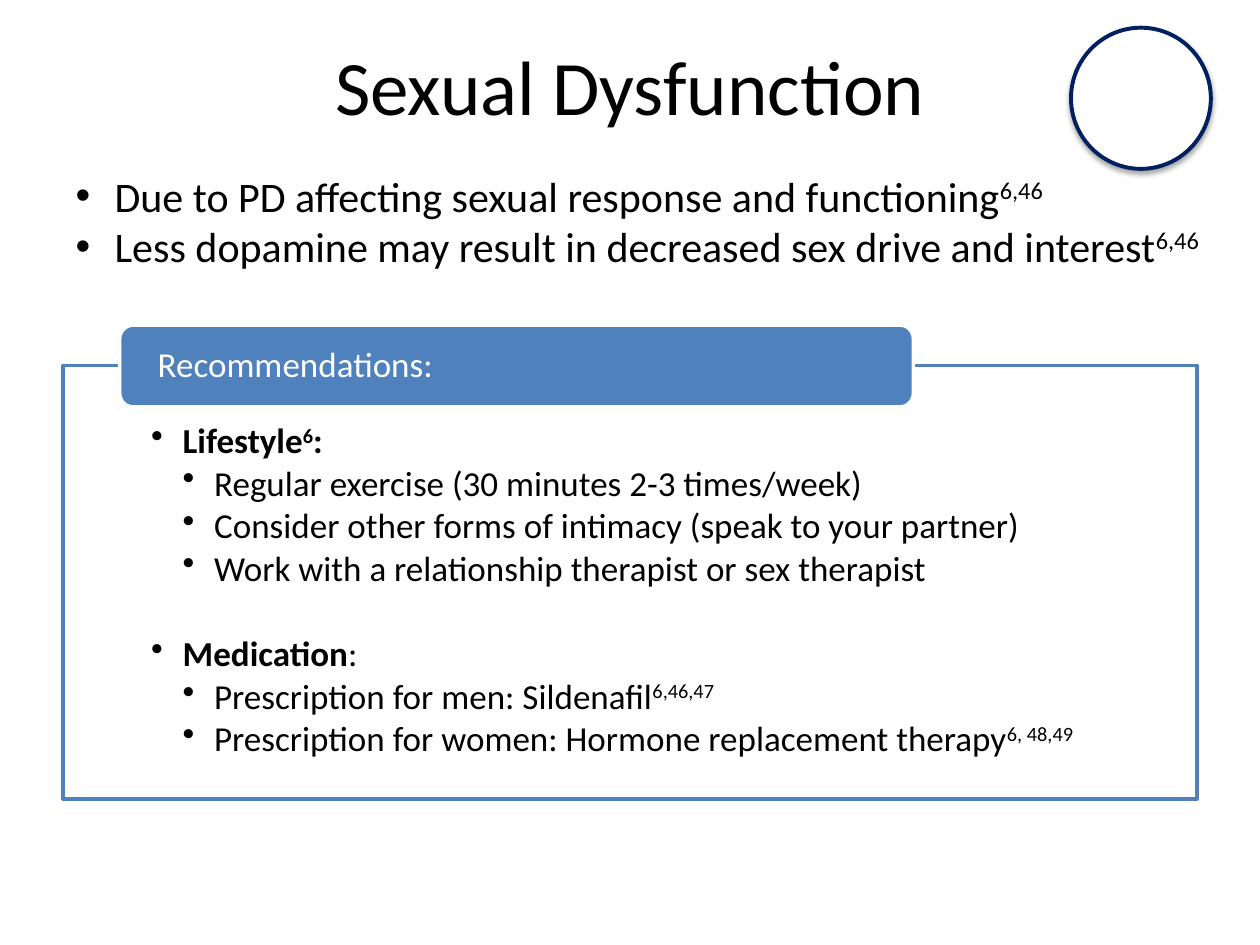
from lxml import etree
from pptx import Presentation
from pptx.dml.color import RGBColor
from pptx.enum.shapes import MSO_SHAPE
from pptx.enum.text import MSO_ANCHOR, MSO_AUTO_SIZE, PP_ALIGN
from pptx.oxml.ns import qn
from pptx.util import Inches, Pt

WHITE = RGBColor(0xFF, 0xFF, 0xFF)
BLACK = RGBColor(0x00, 0x00, 0x00)
BLUE = RGBColor(0x4F, 0x81, 0xBD)
NAVY = RGBColor(0x00, 0x20, 0x60)

OVAL, RECTANGLE, ROUNDED = MSO_SHAPE.OVAL, MSO_SHAPE.RECTANGLE, MSO_SHAPE.ROUNDED_RECTANGLE
TOP, MIDDLE = MSO_ANCHOR.TOP, MSO_ANCHOR.MIDDLE
LEFT, CENTER = PP_ALIGN.LEFT, PP_ALIGN.CENTER
FIXED = MSO_AUTO_SIZE.NONE

FONT = "Calibri"
WIDTH, HEIGHT = 10, 7.5
MARGIN = WIDTH / 20
CONTENT_WIDTH = WIDTH - 2 * MARGIN
INDENT = 0.25
LINE_STEP = 24.65

FACTS = [
    [("Due to PD affecting sexual response and functioning", ""), ("6,46", "^")],
    [("Less dopamine may result in decreased sex drive and interest", ""), ("6,46", "^")],
]
ADVICE = [
    ([("Lifestyle", "b"), ("6", "b^"), (":", "b")], [
        [("Regular exercise (30 minutes 2-3 times/week)", "")],
        [("Consider other forms of intimacy (speak to your partner)", "")],
        [("Work with a relationship therapist or sex therapist", "")],
    ]),
    ([("Medication", "b"), (":", "")], [
        [("Prescription for men: Sildenafil", ""), ("6,46,47", "^")],
        [("Prescription for women: Hormone replacement therapy", ""), ("6, 48,49", "^")],
    ]),
]


def place(box, left, top, width, height):
    """Move and size a box, in inches."""
    box.left, box.top = Inches(left), Inches(top)
    box.width, box.height = Inches(width), Inches(height)


def add_panel(page, kind, bounds, fill, line, weight):
    """Add a filled and outlined shape without a shadow."""
    panel = page.shapes.add_shape(kind, *map(Inches, bounds))
    panel.shadow.inherit = False
    panel.fill.solid()
    panel.fill.fore_color.rgb = fill
    panel.line.color.rgb = line
    panel.line.width = Pt(weight)
    return panel


def add_shadow(shape, blur, distance, opacity):
    """Give a shape a soft black shadow that falls downwards."""
    effects = shape._element.spPr.find(qn("a:effectLst"))
    shadow = etree.SubElement(effects, qn("a:outerShdw"), blurRad=str(Pt(blur)),
                              dist=str(Pt(distance)), dir="5400000", rotWithShape="0")
    color = etree.SubElement(shadow, qn("a:srgbClr"), val=str(BLACK))
    etree.SubElement(color, qn("a:alpha"), val=str(opacity * 1000))


def format_frame(box, anchor, insets):
    """Set the wrapping, anchor and insets of a box and return its text frame."""
    frame = box.text_frame
    frame.word_wrap = True
    frame.auto_size = FIXED
    frame.vertical_anchor = anchor
    (frame.margin_left, frame.margin_top,
     frame.margin_right, frame.margin_bottom) = map(Inches, insets)
    return frame


def write_line(frame, spans, size, color=BLACK, align=LEFT, spacing=1.0,
               before=0, after=0, indent=0, hang=0):
    """Write one paragraph of spans styled b for bold and ^ for superscript."""
    first = frame.paragraphs[0]
    para = first if not first.runs else frame.add_paragraph()
    para.alignment = align
    para.line_spacing = spacing
    para.space_before, para.space_after = Pt(before), Pt(after)
    if hang:
        properties = para._p.get_or_add_pPr()
        properties.set("marL", str(Inches(indent)))
        properties.set("indent", str(Inches(-hang)))
        etree.SubElement(properties, qn("a:buChar"), char="•")
    for text, style in spans:
        span = para.add_run()
        span.text = text
        span.font.name = FONT
        span.font.size = Pt(size)
        span.font.bold = "b" in style
        span.font.color.rgb = color
        if "^" in style:
            span._r.get_or_add_rPr().set("baseline", "30000")


def add_title(page):
    """Fill the title placeholder."""
    title = page.shapes.title
    place(title, MARGIN, 0.05, CONTENT_WIDTH, 1.25)
    frame = format_frame(title, MIDDLE, (0.1, 0.05, 0.1, 0.05))
    write_line(frame, [("Sexual Dysfunction", "")], 44, align=CENTER)


def add_facts(page):
    """Fill the body placeholder with the bulleted facts."""
    body = page.placeholders[1]
    place(body, MARGIN, 1.3, WIDTH - MARGIN, 0.91)
    frame = format_frame(body, TOP, (0.1, 0.05, 0.1, 0.05))
    for spans in FACTS:
        write_line(frame, spans, 24, indent=0.31, hang=0.31)


def add_advice(page):
    """Add the outlined list of recommendations and its heading tab."""
    panel = add_panel(page, RECTANGLE, (MARGIN, 2.9, CONTENT_WIDTH, 3.44), WHITE, BLUE, 2)
    frame = format_frame(panel, TOP, (0.7, 0.46, 0.7, 0.16))
    layout = dict(spacing=0.9, after=2.7, hang=INDENT)
    for index, (heading, items) in enumerate(ADVICE):
        write_line(frame, heading, 20, before=index * LINE_STEP, indent=INDENT, **layout)
        for spans in items:
            write_line(frame, spans, 20, indent=2 * INDENT, **layout)

    tab = add_panel(page, ROUNDED, (0.95, 2.58, CONTENT_WIDTH * 0.7, 0.65), BLUE, WHITE, 2)
    frame = format_frame(tab, MIDDLE, (0.27, 0, 0.27, 0))
    write_line(frame, [("Recommendations:", "")], 20, color=WHITE, spacing=0.9)


def main():
    """Build the slide and save the deck."""
    deck = Presentation()
    deck.slide_width, deck.slide_height = Inches(WIDTH), Inches(HEIGHT)
    page = deck.slides.add_slide(deck.slide_layouts[1])
    circle = add_panel(page, OVAL, (8.5, 0.22, 1.11, 1.12), WHITE, NAVY, 2.25)
    add_shadow(circle, blur=3.1, distance=1.8, opacity=35)
    add_title(page)
    add_facts(page)
    add_advice(page)
    deck.save("out.pptx")


if __name__ == "__main__":
    main()
